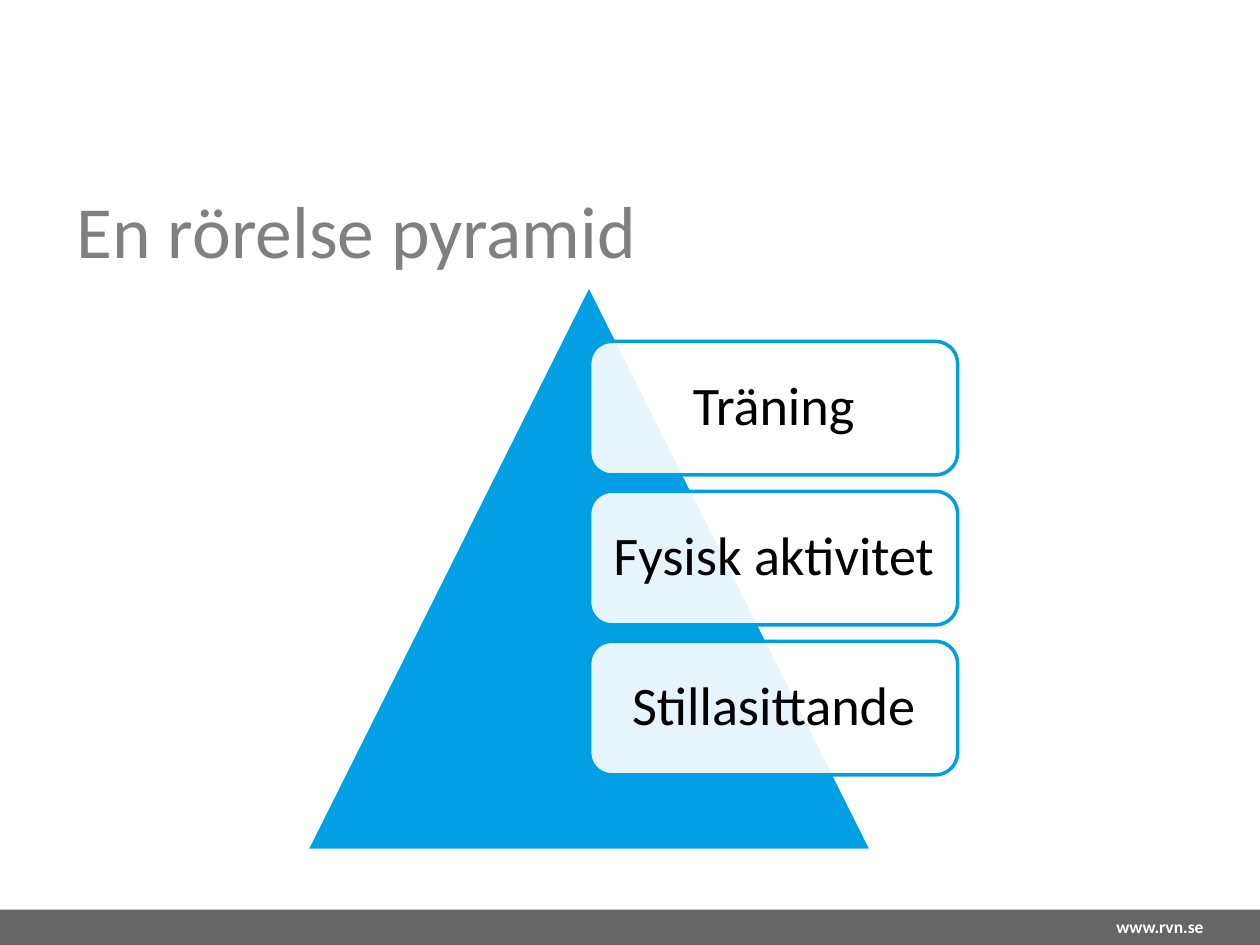
from dataclasses import dataclass

from lxml.etree import SubElement
from pptx import Presentation
from pptx.dml.color import RGBColor as Rgb
from pptx.enum.shapes import MSO_SHAPE as Shape
from pptx.enum.text import MSO_ANCHOR as Anchor, PP_ALIGN as Align
from pptx.oxml.ns import qn
from pptx.util import Emu, Pt

SCALE = 9144  # EMU per px, 100 px to the inch


@dataclass(frozen=True)
class Theme:
    font: str = "Calibri"
    white: str = "FFFFFF"
    black: str = "000000"
    blue: str = "009FE3"
    gray: str = "808080"
    dark: str = "666666"
    head: int = 42
    body: int = 31
    foot: int = 10
    line: int = 2


def px(*vals):
    return [Emu(val * SCALE) for val in vals]


class Deck:
    def __init__(self, theme, wide, high):
        self.theme = theme
        self.prs = Presentation()
        self.prs.slide_width, self.prs.slide_height = px(wide, high)
        self.slide = self.prs.slides.add_slide(self.prs.slide_layouts[5])

    def style(self, frame, text, size, color, align, anchor, pads, wrap=True, bold=False):
        frame.text = text
        frame.word_wrap = wrap
        frame.vertical_anchor = anchor
        (frame.margin_left, frame.margin_top,
         frame.margin_right, frame.margin_bottom) = px(*pads)
        para = frame.paragraphs[0]
        para.alignment = align
        font = para.runs[0].font
        font.name, font.size, font.bold = self.theme.font, Pt(size), bold
        font.color.rgb = Rgb.from_string(color)
        return para

    def title(self, text, *box):
        head = self.slide.shapes.title
        head.left, head.top, head.width, head.height = px(*box)
        para = self.style(head.text_frame, text, self.theme.head, self.theme.gray,
                          Align.LEFT, Anchor.BOTTOM, (10, 5, 10, 0))
        para.line_spacing = Pt(self.theme.head)

    def shape(self, kind, box, fill, line=None):
        item = self.slide.shapes.add_shape(kind, *px(*box))
        item.shadow.inherit = False
        item.fill.solid()
        item.fill.fore_color.rgb = Rgb.from_string(fill)
        if line:
            item.line.color.rgb = Rgb.from_string(line)
            item.line.width = Pt(self.theme.line)
        else:
            item.line.fill.background()
        return item

    def card(self, text, *box):
        item = self.shape(Shape.ROUNDED_RECTANGLE, box, self.theme.white, self.theme.blue)
        # Let the pyramid show faintly through the card
        tone = item.element.spPr.find(qn("a:solidFill"))[0]
        SubElement(tone, qn("a:alpha"), val="90000")
        para = self.style(item.text_frame, text, self.theme.body, self.theme.black,
                          Align.CENTER, Anchor.MIDDLE, (13, 13, 13, 13), wrap=False)
        para.line_spacing = 0.9

    def label(self, text, *box):
        item = self.slide.shapes.add_textbox(*px(*box))
        self.style(item.text_frame, text, self.theme.foot, self.theme.white,
                   Align.RIGHT, Anchor.MIDDLE, (10, 5, 10, 5), bold=True)


def main():
    theme = Theme()
    deck = Deck(theme, 1000, 750)

    # Footer
    deck.shape(Shape.RECTANGLE, (0, 722, 1000, 28), theme.dark)
    deck.label("www.rvn.se", 870, 722, 95, 27)

    # Title
    deck.title("En rörelse pyramid", 51, 115, 900, 102)

    # Pyramid
    deck.shape(Shape.ISOSCELES_TRIANGLE, (243, 226, 449, 449), theme.blue, theme.white)

    # Levels, evenly stacked over the pyramid
    high, gap = 106, 13
    for row, text in enumerate(("Träning", "Fysisk aktivitet", "Stillasittande")):
        deck.card(text, 468, 271 + row * (high + gap), 292, high)

    deck.prs.save("out.pptx")


if __name__ == "__main__":
    main()
